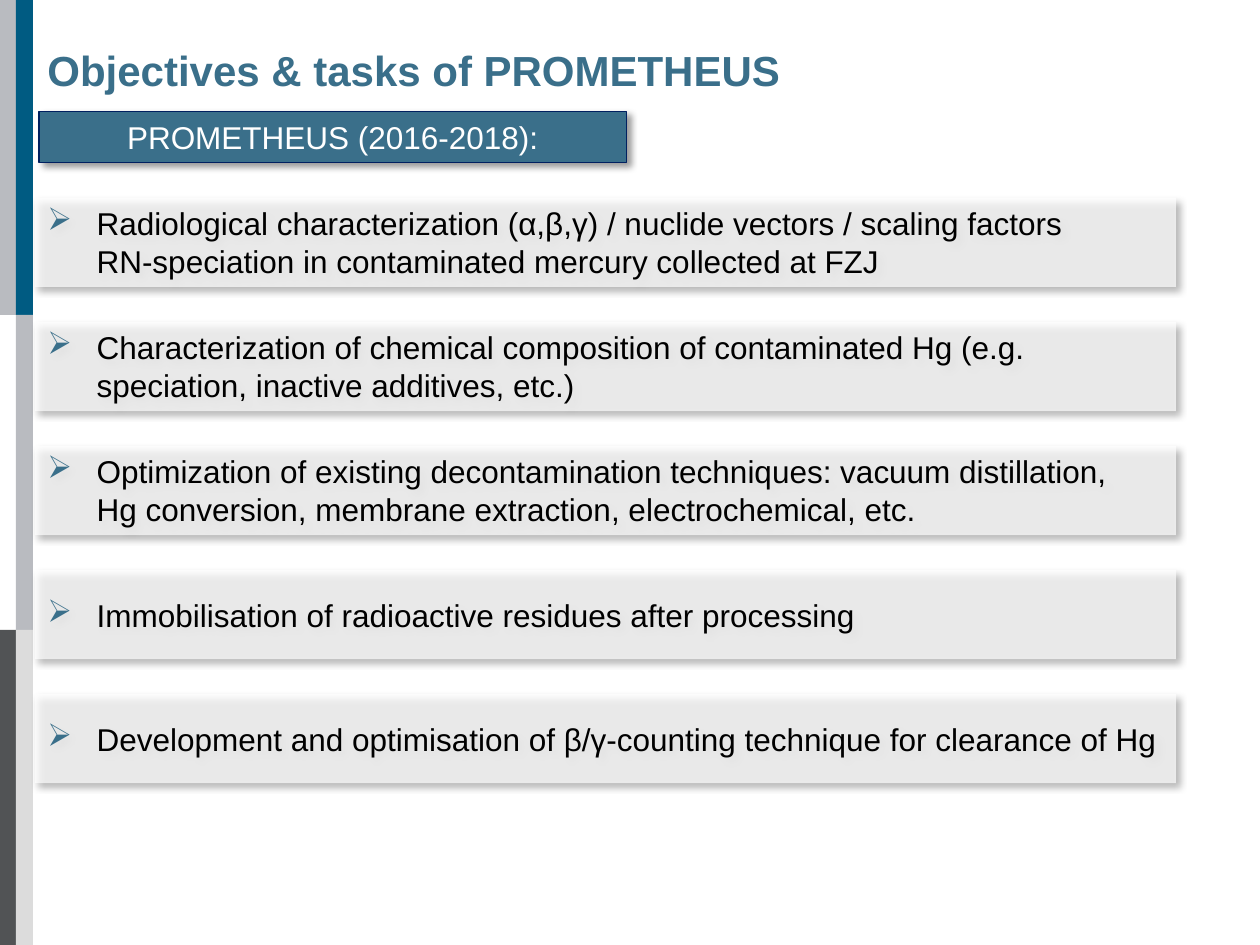
from dataclasses import dataclass
from typing import Optional

from lxml.etree import SubElement as Sub
from pptx import Presentation
from pptx.dml.color import RGBColor as RGB
from pptx.enum.shapes import MSO_SHAPE as Kind
from pptx.enum.text import MSO_ANCHOR as Anchor, MSO_AUTO_SIZE as Auto, PP_ALIGN as Align
from pptx.oxml.ns import qn
from pptx.util import Pt

HUES = {
    "white": "FFFFFF", "black": "000000", "teal": "3A6F8A", "navy": "002060",
    "blue": "005B82", "gray": "B9BBC0", "dark": "515355", "pale": "DCDCDC",
}
FONT = "Arial"
STEP = 70.9


@dataclass
class Box:
    left: float
    top: float
    wide: float
    high: float
    fill: str
    text: str = ""
    ink: str = "black"
    size: float = 18
    bold: bool = False
    align: Align = Align.LEFT
    anchor: Anchor = Anchor.TOP
    fit: Auto = Auto.SHAPE_TO_FIT_TEXT
    clear: bool = False
    shade: bool = False
    mark: bool = False
    line: Optional[str] = None


def hue(name: str) -> RGB:
    return RGB.from_string(HUES[name])


def put(item, **vals) -> None:
    for key, val in vals.items():
        setattr(item, key, val)


def add_shade(shape) -> None:
    list_ = shape._element.spPr.find(qn("a:effectLst"))
    glow = Sub(list_, qn("a:outerShdw"), blurRad=str(Pt(4)), dist=str(Pt(3)),
               dir=str(45 * 60000), algn="tl", rotWithShape="0")
    tint = Sub(glow, qn("a:srgbClr"), val=HUES["black"])
    Sub(tint, qn("a:alpha"), val="40000")


def add_mark(para) -> None:
    props = para._p.get_or_add_pPr()
    put_in = Pt(28.1)
    props.set("marL", str(put_in))
    props.set("indent", str(-put_in))
    tint = Sub(props, qn("a:buClr"))
    Sub(tint, qn("a:srgbClr"), val=HUES["teal"])
    Sub(props, qn("a:buChar"), char="➢")


def add_text(shape, box: Box) -> None:
    frame = shape.text_frame
    put(frame, word_wrap=True, auto_size=box.fit, vertical_anchor=box.anchor)
    para = frame.paragraphs[0]
    para.text = box.text
    para.alignment = box.align
    if box.mark:
        add_mark(para)
    for run in para.runs:
        put(run.font, name=FONT, size=Pt(box.size), bold=box.bold)
        run.font.color.rgb = hue(box.ink)


def draw(slide, box: Box) -> None:
    shape = slide.shapes.add_shape(
        Kind.RECTANGLE, Pt(box.left), Pt(box.top), Pt(box.wide), Pt(box.high))
    shape.shadow.inherit = False
    shape.fill.solid()
    shape.fill.fore_color.rgb = hue(box.fill)
    if box.clear:
        tint = shape._element.spPr.find(qn("a:solidFill"))[0]
        Sub(tint, qn("a:alpha"), val="70000")
    if box.line:
        shape.line.color.rgb = hue(box.line)
        shape.line.width = Pt(0.75)
    else:
        shape.line.fill.background()
    if box.shade:
        add_shade(shape)
    if box.text:
        add_text(shape, box)


BARS = [
    Box(0, 0, 9.8, 180, "gray"),
    Box(0, 360, 9.8, 180, "dark"),
    Box(9.1, 0, 9.8, 180, "blue"),
    Box(9.1, 180, 9.8, 180, "gray"),
    Box(9.1, 360, 9.8, 180, "pale"),
]
HEADS = [
    Box(20, 17.3, 556.5, 45.4, "white", "Objectives & tasks of PROMETHEUS",
        ink="teal", size=24, bold=True, anchor=Anchor.MIDDLE, fit=Auto.NONE, clear=True),
    Box(22.4, 63.8, 335.5, 29, "teal", "PROMETHEUS (2016-2018):",
        ink="white", align=Align.CENTER, shade=True, line="navy"),
]
LEFT = {"align": Align.LEFT, "anchor": Anchor.TOP}
EVEN = {"align": Align.JUSTIFY, "anchor": Anchor.MIDDLE}
TASKS = [
    ("Radiological characterization (α,β,γ) / nuclide vectors / scaling factors\v"
     "RN-speciation in contaminated mercury collected at FZJ", LEFT),
    ("Characterization of chemical composition of contaminated Hg (e.g. "
     "speciation, inactive additives, etc.)", LEFT),
    ("Optimization of existing decontamination techniques: vacuum distillation,\v"
     "Hg conversion, membrane extraction, electrochemical, etc.", LEFT),
    ("Immobilisation of radioactive residues after processing", EVEN),
    ("Development and optimisation of β/γ-counting technique for clearance of Hg", EVEN),
]


def main() -> None:
    deck = Presentation()
    put(deck, slide_width=Pt(720), slide_height=Pt(540))
    slide = deck.slides.add_slide(deck.slide_layouts[6])
    rows = [
        Box(20, 113 + i * STEP, 652, 51, "white", text,
            clear=True, shade=True, mark=True, **style)
        for i, (text, style) in enumerate(TASKS)
    ]
    for box in BARS + HEADS + rows:
        draw(slide, box)
    deck.save("out.pptx")


if __name__ == "__main__":
    main()
